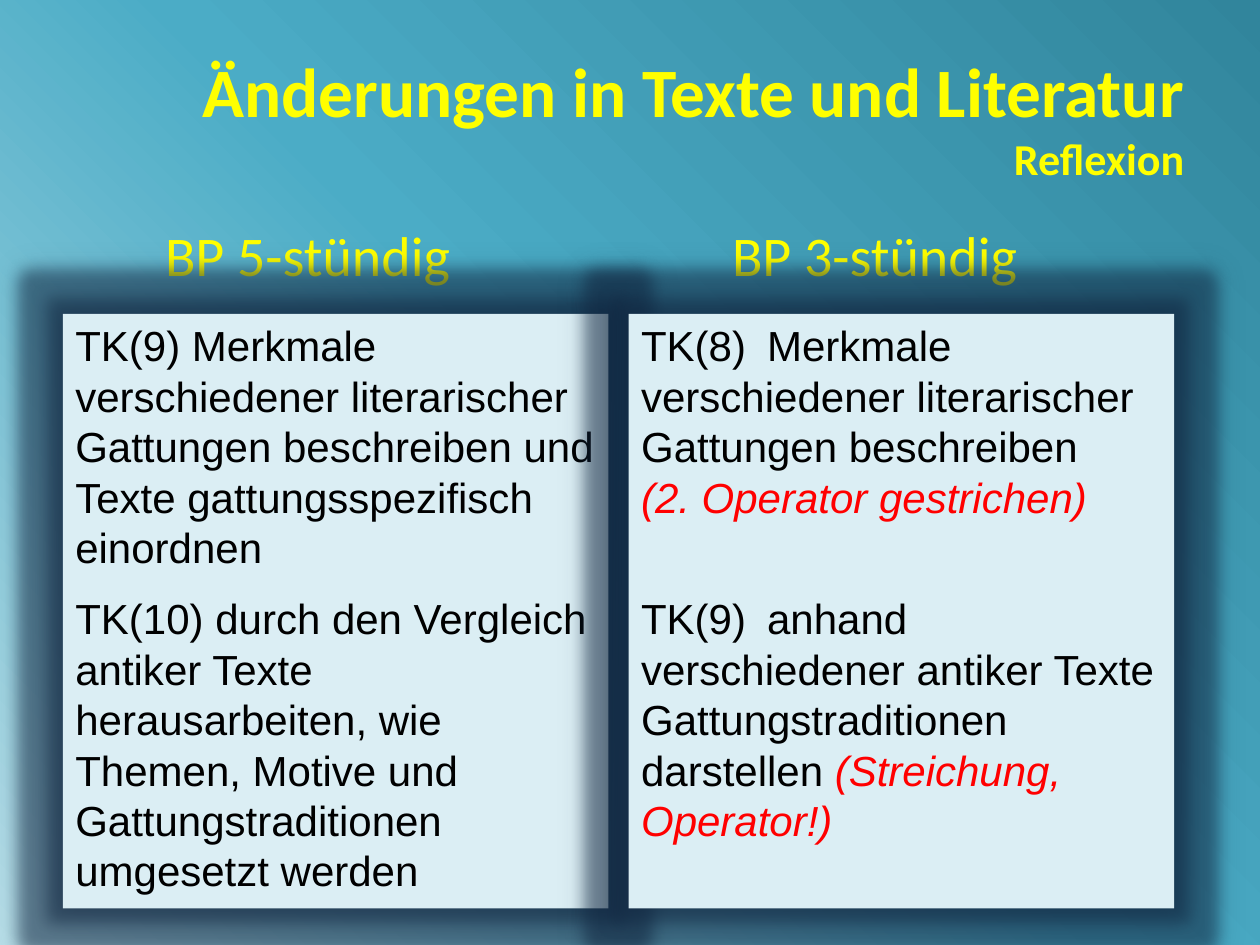
from copy import deepcopy

from lxml.etree import SubElement
from pptx import Presentation
from pptx.dml.color import RGBColor
from pptx.enum.shapes import MSO_SHAPE
from pptx.enum.text import MSO_ANCHOR, PP_ALIGN
from pptx.oxml.ns import qn
from pptx.util import Inches, Pt

YELLOW, BLACK, RED = "FFFF00", "000000", "FF0000"
PALE_BLUE, NAVY = "DBEEF4", "10253F"
BACKGROUND_STOPS = [(0, "31859C"), (0.5, "4BACC6"), (1, "B7DEE8")]

LEFT_PARAGRAPHS = [
    (0, [("TK(9) Merkmale verschiedener literarischer Gattungen beschreiben "
          "und Texte gattungsspezifisch einordnen", BLACK)]),
    (12, [("TK(10) durch den Vergleich antiker Texte herausarbeiten, wie "
           "Themen, Motive und Gattungstraditionen umgesetzt werden", BLACK)]),
]
RIGHT_PARAGRAPHS = [
    (0, [("TK(8) \tMerkmale verschiedener literarischer Gattungen "
          "beschreiben", BLACK)]),
    (0, [("(2. Operator gestrichen)", RED)]),
    (40.8, [("TK(9) \tanhand verschiedener antiker Texte "
             "Gattungstraditionen darstellen ", BLACK),
            ("(Streichung, Operator!)", RED)]),
]


def color(hex_text):
    return RGBColor.from_string(hex_text)


class SlideBuilder:
    heading_font = "Calibri"
    text_font = "Arial"

    def __init__(self, slide):
        self.slide = slide

    def style_run(self, run, font_name, size, hex_text, bold=None, italic=None):
        font = run.font
        font.name, font.size = font_name, Pt(size)
        font.bold, font.italic = bold, italic
        font.color.rgb = color(hex_text)

    def place(self, shape, left, top, width, height):
        shape.left, shape.top = Inches(left), Inches(top)
        shape.width, shape.height = Inches(width), Inches(height)

    def background(self, stops):
        fill = self.slide.background.fill
        fill.gradient()
        fill.gradient_angle = 225
        stop_list = fill._fill._gradFill.find(qn("a:gsLst"))
        while len(stop_list) < len(stops):
            stop_list.append(deepcopy(stop_list[-1]))
        for stop, (position, hex_text) in zip(fill.gradient_stops, stops):
            stop.position = position
            stop.color.rgb = color(hex_text)

    def title(self, heading, subheading):
        shape = self.slide.shapes.title
        self.place(shape, 0.5, 0.3, 9, 1.25)
        shape.text_frame.text = f"{heading}\v{subheading}"
        shape.text_frame.vertical_anchor = MSO_ANCHOR.MIDDLE
        paragraph = shape.text_frame.paragraphs[0]
        paragraph.alignment = PP_ALIGN.RIGHT
        for run, size in zip(paragraph.runs, (39.6, 25.2)):
            self.style_run(run, self.heading_font, size, YELLOW, bold=True)

    def column_heading(self, placeholder_index, left, text):
        shape = self.slide.placeholders[placeholder_index]
        self.place(shape, left, 1.7, 3, 0.8)
        shape.text_frame.text = text
        paragraph = shape.text_frame.paragraphs[0]
        self.style_run(paragraph.runs[0], self.heading_font, 32, YELLOW)
        properties = paragraph._p.get_or_add_pPr()
        properties.set("marL", "0")
        properties.set("indent", "0")
        SubElement(properties, qn("a:buNone"))

    def dark_halo(self, shape):
        """Surround the shape with a wide glow and a tighter soft shadow."""
        shape.shadow.inherit = False
        effects = shape._element.spPr.find(qn("a:effectLst"))
        glow = SubElement(effects, qn("a:glow"), rad=str(Inches(0.24)))
        shadow = SubElement(effects, qn("a:outerShdw"),
                            blurRad=str(Inches(0.15)), dist="0", dir="0",
                            algn="ctr", rotWithShape="0")
        for effect, alpha in ((glow, "45000"), (shadow, "50000")):
            effect_color = SubElement(effect, qn("a:srgbClr"), val=NAVY)
            SubElement(effect_color, qn("a:alpha"), val=alpha)

    def text_panel(self, left, paragraphs):
        shape = self.slide.shapes.add_shape(
            MSO_SHAPE.RECTANGLE, Inches(left), Inches(2.49),
            Inches(4.33), Inches(4.72))
        shape.fill.solid()
        shape.fill.fore_color.rgb = color(PALE_BLUE)
        shape.line.fill.background()
        self.dark_halo(shape)
        frame = shape.text_frame
        frame.word_wrap = True
        frame.vertical_anchor = MSO_ANCHOR.TOP
        for index, (space_before, pieces) in enumerate(paragraphs):
            paragraph = frame.add_paragraph() if index else frame.paragraphs[0]
            paragraph.alignment = PP_ALIGN.LEFT
            paragraph.line_spacing = Pt(28.8)
            paragraph.space_before = Pt(space_before)
            for text, hex_text in pieces:
                run = paragraph.add_run()
                run.text = text
                self.style_run(run, self.text_font, 24, hex_text,
                               italic=hex_text == RED)


def main():
    presentation = Presentation()
    presentation.slide_width, presentation.slide_height = Inches(10), Inches(7.5)
    two_content_layout = presentation.slide_layouts[3]
    slide = presentation.slides.add_slide(two_content_layout)
    builder = SlideBuilder(slide)
    builder.background(BACKGROUND_STOPS)
    builder.title("Änderungen in Texte und Literatur", "Reflexion")
    builder.column_heading(1, 1.21, "BP 5-stündig")
    builder.column_heading(2, 5.71, "BP 3-stündig")
    builder.text_panel(0.5, LEFT_PARAGRAPHS)
    builder.text_panel(4.99, RIGHT_PARAGRAPHS)
    presentation.save("out.pptx")


if __name__ == "__main__":
    main()
